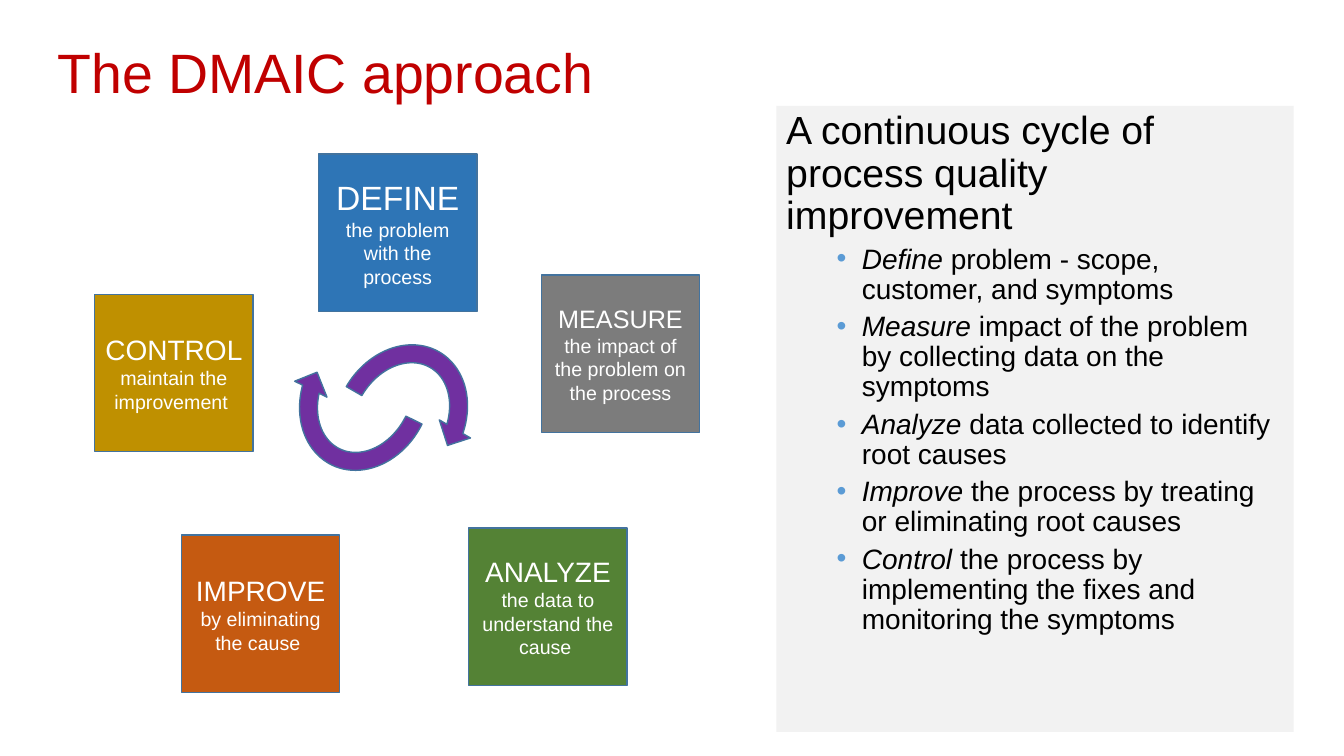
"""Build the DMAIC cycle slide."""
from lxml import etree
from pptx import Presentation, util as u
from pptx.dml.color import RGBColor
from pptx.enum import shapes, text
from pptx.oxml import ns


def color(code):
    return RGBColor.from_string(code)


def add_run(para, words, size, code, slant=False):
    run = para.add_run()
    run.text = words
    run.font.name = "Arial"
    run.font.size = u.Pt(size)
    run.font.italic = slant
    run.font.color.rgb = color(code)


deck = Presentation()
deck.slide_width, deck.slide_height = u.Inches(13.33), u.Inches(7.5)
slide = deck.slides.add_slide(deck.slide_layouts[5])

title = slide.shapes.title
title.left, title.top, title.width, title.height = map(u.Inches, (0.47, 0.24, 5.75, 1.01))
frame = title.text_frame
frame.auto_size = text.MSO_AUTO_SIZE.NONE
frame.vertical_anchor = text.MSO_ANCHOR.MIDDLE
head = frame.paragraphs[0]
head.alignment = text.PP_ALIGN.LEFT
head.line_spacing = 0.9
add_run(head, "The DMAIC approach", 39.6, "C00000")

steps = [
    (3.16, 1.53, "2E75B6", "DEFINE", 24, "the problem with the process"),
    (5.37, 2.73, "7C7C7C", "MEASURE", 18, "the impact of the problem on the process"),
    (4.65, 5.24, "548235", "ANALYZE", 20, "the data to understand the cause "),
    (1.80, 5.31, "C55A11", "IMPROVE", 20, "by eliminating the cause "),
    (0.94, 2.92, "BF9000", "CONTROL", 20, "maintain the improvement "),
]
cycle = slide.shapes.add_group_shape()
for left, top, fill, name, size, note in steps:
    box = cycle.shapes.add_shape(
        shapes.MSO_SHAPE.RECTANGLE, *map(u.Inches, (left, top, 1.57, 1.56)))
    box.shadow.inherit = False
    box.fill.solid()
    box.fill.fore_color.rgb = color(fill)
    box.line.color.rgb = color("43739E")
    box.line.width = u.Pt(1)
    frame = box.text_frame
    frame.word_wrap = True
    frame.vertical_anchor = text.MSO_ANCHOR.MIDDLE
    for para, words, points in (
            (frame.paragraphs[0], name, size), (frame.add_paragraph(), note, 14)):
        para.alignment = text.PP_ALIGN.CENTER
        add_run(para, words, points, "FFFFFF")

loop = slide.shapes.add_group_shape()
for left, top, angle in ((3.26, 3.3, 30.2), (2.91, 3.08, 206.3)):
    arrow = loop.shapes.add_shape(
        shapes.MSO_SHAPE.CIRCULAR_ARROW, *map(u.Inches, (left, top, 1.43, 1.7)))
    arrow.rotation = angle
    arrow.shadow.inherit = False
    arrow.fill.solid()
    arrow.fill.fore_color.rgb = color("7030A0")
    arrow.line.color.rgb = color("43739E")
    arrow.line.width = u.Pt(1)

panel = slide.shapes.add_textbox(*map(u.Inches, (7.7, 1.05, 5.13, 6.21)))
panel.fill.solid()
panel.fill.fore_color.rgb = color("F2F2F2")
frame = panel.text_frame
frame.word_wrap = True
lead = frame.paragraphs[0]
lead.line_spacing = 0.9
lead.space_before = u.Pt(10)
add_run(lead, "A continuous cycle of process quality improvement", 28, "000000")

points = [
    ("Define", " problem - scope, customer, and symptoms"),
    ("Measure", " impact of the problem by collecting data on the symptoms"),
    ("Analyze", " data collected to identify root causes"),
    ("Improve", " the process by treating or eliminating root causes"),
    ("Control", " the process by implementing the fixes and monitoring the symptoms"),
]
for verb, rest in points:
    para = frame.add_paragraph()
    para.level = 1
    para.line_spacing = 0.9
    para.space_before = u.Pt(5)
    props = para._p.get_or_add_pPr()
    props.set("marL", str(u.Inches(0.75)))
    props.set("indent", str(u.Inches(-0.25)))
    tint = etree.SubElement(props, ns.qn("a:buClr"))
    etree.SubElement(tint, ns.qn("a:srgbClr"), val="5B9BD5")
    etree.SubElement(props, ns.qn("a:buFont"), typeface="Arial")
    etree.SubElement(props, ns.qn("a:buChar"), char="•")
    add_run(para, verb, 20, "000000", True)
    add_run(para, rest, 20, "000000")

deck.save("out.pptx")
